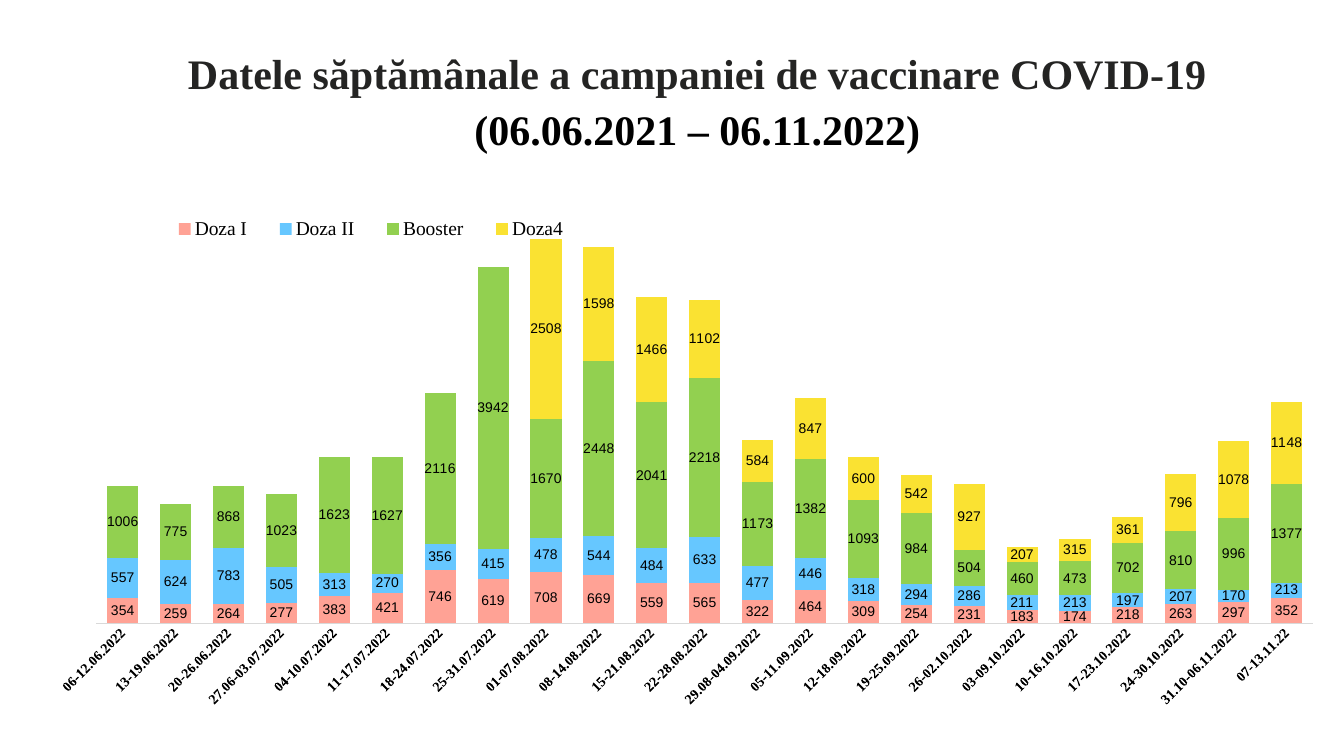
from dataclasses import dataclass

from pptx import Presentation
from pptx.chart.chart import Chart
from pptx.chart.data import CategoryChartData
from pptx.dml.color import RGBColor
from pptx.enum.chart import XL_CHART_TYPE, XL_LABEL_POSITION, XL_LEGEND_POSITION, XL_TICK_MARK
from pptx.enum.text import MSO_ANCHOR, MSO_AUTO_SIZE, PP_ALIGN
from pptx.oxml import parse_xml
from pptx.oxml.ns import nsdecls
from pptx.slide import Slide
from pptx.util import Inches, Pt

SLIDE_WIDTH, SLIDE_HEIGHT = Inches(26.67), Inches(15)
SERIF, SANS = "Times New Roman", "Arial"
BLACK = "000000"


@dataclass(frozen=True)
class Area:
    left: float
    top: float
    width: float
    height: float

    def on_slide(self) -> tuple[int, int, int, int]:
        return (int(self.left * SLIDE_WIDTH), int(self.top * SLIDE_HEIGHT),
                int(self.width * SLIDE_WIDTH), int(self.height * SLIDE_HEIGHT))


@dataclass(frozen=True)
class TitleLine:
    text: str
    color: str


@dataclass(frozen=True)
class Dose:
    name: str
    color: str
    counts: list[int | None]


TITLE_AREA = Area(0.0709, 0.056, 0.8958, 0.1493)
CHART_AREA = Area(0.0439, 0.2433, 0.9333, 0.7007)
PLOT_AREA = Area(0.033, 0.018, 0.975, 0.811)
LEGEND_AREA = Area(0.07, 0.055, 0.35, 0.06)

TITLE_LINES = [
    TitleLine("Datele săptămânale a campaniei de vaccinare COVID-19", "242423"),
    TitleLine("(06.06.2021 – 06.11.2022)", BLACK),
]

WEEKS = [
    "06-12.06.2022", "13-19.06.2022", "20-26.06.2022", "27.06-03.07.2022",
    "04-10.07.2022", "11-17.07.2022", "18-24.07.2022", "25-31.07.2022",
    "01-07.08.2022", "08-14.08.2022", "15-21.08.2022", "22-28.08.2022",
    "29.08-04.09.2022", "05-11.09.2022", "12-18.09.2022", "19-25.09.2022",
    "26-02.10.2022", "03-09.10.2022", "10-16.10.2022", "17-23.10.2022",
    "24-30.10.2022", "31.10-06.11.2022", "07-13.11.22",
]

DOSES = [
    Dose("Doza I", "FFA295", [
        354, 259, 264, 277, 383, 421, 746, 619, 708, 669, 559, 565,
        322, 464, 309, 254, 231, 183, 174, 218, 263, 297, 352]),
    Dose("Doza II", "66C7FF", [
        557, 624, 783, 505, 313, 270, 356, 415, 478, 544, 484, 633,
        477, 446, 318, 294, 286, 211, 213, 197, 207, 170, 213]),
    Dose("Booster", "92D050", [
        1006, 775, 868, 1023, 1623, 1627, 2116, 3942, 1670, 2448, 2041, 2218,
        1173, 1382, 1093, 984, 504, 460, 473, 702, 810, 996, 1377]),
    Dose("Doza4", "FAE232", [None] * 8 + [
        2508, 1598, 1466, 1102, 584, 847, 600, 542, 927, 207, 315, 361, 796, 1078, 1148]),
]


def color_of(value: str) -> RGBColor:
    return RGBColor.from_string(value)


def style_font(font, name: str, size: float, color: str, bold: bool = False) -> None:
    font.name, font.size, font.bold = name, Pt(size), bold
    font.color.rgb = color_of(color)


def write_title(page: Slide, area: Area, lines: list[TitleLine]) -> None:
    box = page.shapes.title
    box.left, box.top, box.width, box.height = area.on_slide()
    frame = box.text_frame
    frame.margin_left = frame.margin_top = frame.margin_right = frame.margin_bottom = 0
    frame.word_wrap = True
    frame.vertical_anchor = MSO_ANCHOR.TOP
    frame.auto_size = MSO_AUTO_SIZE.SHAPE_TO_FIT_TEXT
    for index, line in enumerate(lines):
        para = frame.add_paragraph() if index else frame.paragraphs[0]
        para.alignment = PP_ALIGN.CENTER
        para.line_spacing = Pt(80)
        para.space_before = Pt(0)
        span = para.add_run()
        span.text = line.text
        style_font(span.font, SERIF, 60, line.color, bold=True)


def place_part(parent, index: int, area: Area, inner: bool = False) -> None:
    for old in parent.xpath("./c:layout"):
        parent.remove(old)
    target = '<c:layoutTarget val="inner"/>' if inner else ""
    parent.insert(index, parse_xml(
        f'<c:layout {nsdecls("c")}><c:manualLayout>{target}'
        '<c:xMode val="edge"/><c:yMode val="edge"/>'
        f'<c:x val="{area.left}"/><c:y val="{area.top}"/>'
        f'<c:w val="{area.width}"/><c:h val="{area.height}"/>'
        '</c:manualLayout></c:layout>'))


def style_axes(chart: Chart) -> None:
    weeks = chart.category_axis
    weeks.major_tick_mark = weeks.minor_tick_mark = XL_TICK_MARK.NONE
    weeks.has_major_gridlines = False
    weeks.format.line.color.rgb = color_of("D9D9D9")
    weeks.format.line.width = Pt(0.75)
    style_font(weeks.tick_labels.font, SERIF, 20, BLACK, bold=True)
    chart.element.xpath(".//c:catAx/c:txPr/a:bodyPr")[0].set("rot", "-2700000")
    counts = chart.value_axis
    counts.minimum_scale, counts.maximum_scale = 0, 6000
    counts.has_major_gridlines = False
    counts.visible = False


def style_doses(chart: Chart, doses: list[Dose]) -> None:
    plot = chart.plots[0]
    plot.gap_width, plot.overlap = 70, 100
    plot.vary_by_categories = False
    for series, dose in zip(plot.series, doses):
        series.format.fill.solid()
        series.format.fill.fore_color.rgb = color_of(dose.color)
        labels = series.data_labels
        labels.show_value = True
        labels.position = XL_LABEL_POSITION.CENTER
        style_font(labels.font, SANS, 20, BLACK)


def draw_chart(page: Slide, area: Area, doses: list[Dose]) -> None:
    data = CategoryChartData()
    data.categories = WEEKS
    for dose in doses:
        data.add_series(dose.name, dose.counts)
    chart = page.shapes.add_chart(XL_CHART_TYPE.COLUMN_STACKED, *area.on_slide(), data).chart
    style_font(chart.font, SANS, 16, BLACK)
    chart.has_title = False
    style_axes(chart)
    style_doses(chart, doses)
    chart.has_legend = True
    chart.legend.position = XL_LEGEND_POSITION.BOTTOM
    chart.legend.include_in_layout = False
    style_font(chart.legend.font, SERIF, 28, BLACK)
    place_part(chart.element.xpath(".//c:plotArea")[0], 0, PLOT_AREA, inner=True)
    place_part(chart.element.xpath(".//c:legend")[0], 1, LEGEND_AREA)


def main() -> None:
    deck = Presentation()
    deck.slide_width, deck.slide_height = SLIDE_WIDTH, SLIDE_HEIGHT
    page = deck.slides.add_slide(deck.slide_layouts[5])
    write_title(page, TITLE_AREA, TITLE_LINES)
    draw_chart(page, CHART_AREA, DOSES)
    deck.save("out.pptx")


if __name__ == "__main__":
    main()
